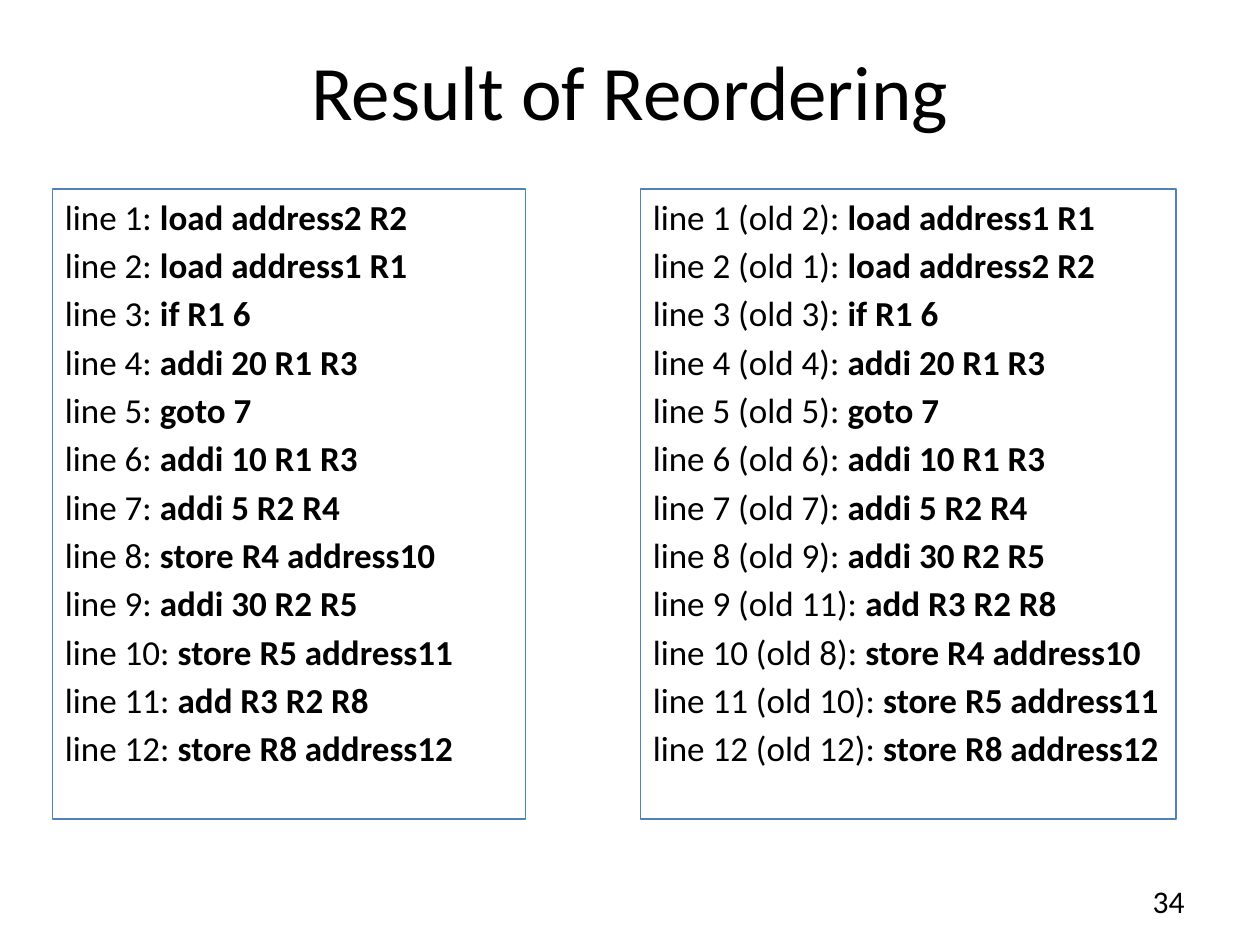
from pptx import Presentation
from pptx.dml.color import RGBColor
from pptx.enum.shapes import MSO_SHAPE as Shape
from pptx.enum.text import MSO_ANCHOR as Anchor, PP_ALIGN as Align
from pptx.util import Cm, Pt

BLACK = RGBColor(0x00, 0x00, 0x00)
BLUE = RGBColor(0x4F, 0x81, 0xBD)

INSTRUCTIONS = [
    "load address2 R2", "load address1 R1", "if R1 6", "addi 20 R1 R3",
    "goto 7", "addi 10 R1 R3", "addi 5 R2 R4", "store R4 address10",
    "addi 30 R2 R5", "store R5 address11", "add R3 R2 R8", "store R8 address12",
]
NEW_ORDER = [2, 1, 3, 4, 5, 6, 7, 9, 11, 8, 10, 12]


def set_attributes(target, values):
    """Set each named attribute of the target."""
    for name, value in values.items():
        setattr(target, name, value)


def add_run(paragraph, text, size, bold=False):
    """Append a black Calibri run to the paragraph."""
    run = paragraph.add_run()
    run.text = text
    set_attributes(run.font, {"name": "Calibri", "size": Pt(size), "bold": bold})
    run.font.color.rgb = BLACK


def place_title(slide, box, text):
    """Move the title placeholder into the box and fill it."""
    title = slide.shapes.title
    set_attributes(title, dict(zip(("left", "top", "width", "height"), box)))
    set_attributes(title.text_frame, {"vertical_anchor": Anchor.MIDDLE, "word_wrap": True})
    paragraph = title.text_frame.paragraphs[0]
    paragraph.alignment = Align.CENTER
    add_run(paragraph, text, 44)


def place_listing(slide, box, lines):
    """Draw an outlined listing of (label, instruction) lines in the box."""
    shape = slide.shapes.add_shape(Shape.RECTANGLE, *box)
    shape.shadow.inherit = False
    shape.fill.background()
    shape.line.color.rgb = BLUE
    shape.line.width = Pt(0.75)
    frame = shape.text_frame
    set_attributes(frame, {"vertical_anchor": Anchor.TOP, "word_wrap": True})
    for index, (label, instruction) in enumerate(lines):
        paragraph = frame.add_paragraph() if index else frame.paragraphs[0]
        set_attributes(paragraph, {"alignment": Align.LEFT, "space_before": Pt(3.6)})
        add_run(paragraph, f"{label}: ", 20)
        add_run(paragraph, instruction, 20, bold=True)


def place_page_number(slide, box, number):
    """Write the page number at the right of the box."""
    frame = slide.shapes.add_textbox(*box).text_frame
    frame.word_wrap = True
    paragraph = frame.paragraphs[0]
    paragraph.alignment = Align.RIGHT
    add_run(paragraph, str(number), 18)


def main():
    """Build the slide and save it."""
    presentation = Presentation()
    set_attributes(presentation, {"slide_width": Cm(25.4), "slide_height": Cm(19.05)})
    slide = presentation.slides.add_slide(presentation.slide_layouts[5])

    before = [(f"line {line}", text) for line, text in enumerate(INSTRUCTIONS, 1)]
    after = [(f"line {line} (old {old})", INSTRUCTIONS[old - 1])
             for line, old in enumerate(NEW_ORDER, 1)]

    place_title(slide, (Cm(1.27), Cm(0.21), Cm(22.86), Cm(3.18)), "Result of Reordering")
    place_page_number(slide, (Cm(18.2), Cm(17.65), Cm(5.93), Cm(1.02)), 34)
    place_listing(slide, (Cm(1.06), Cm(3.81), Cm(9.53), Cm(12.7)), before)
    place_listing(slide, (Cm(12.91), Cm(3.81), Cm(10.8), Cm(12.7)), after)
    presentation.save("out.pptx")


if __name__ == "__main__":
    main()
